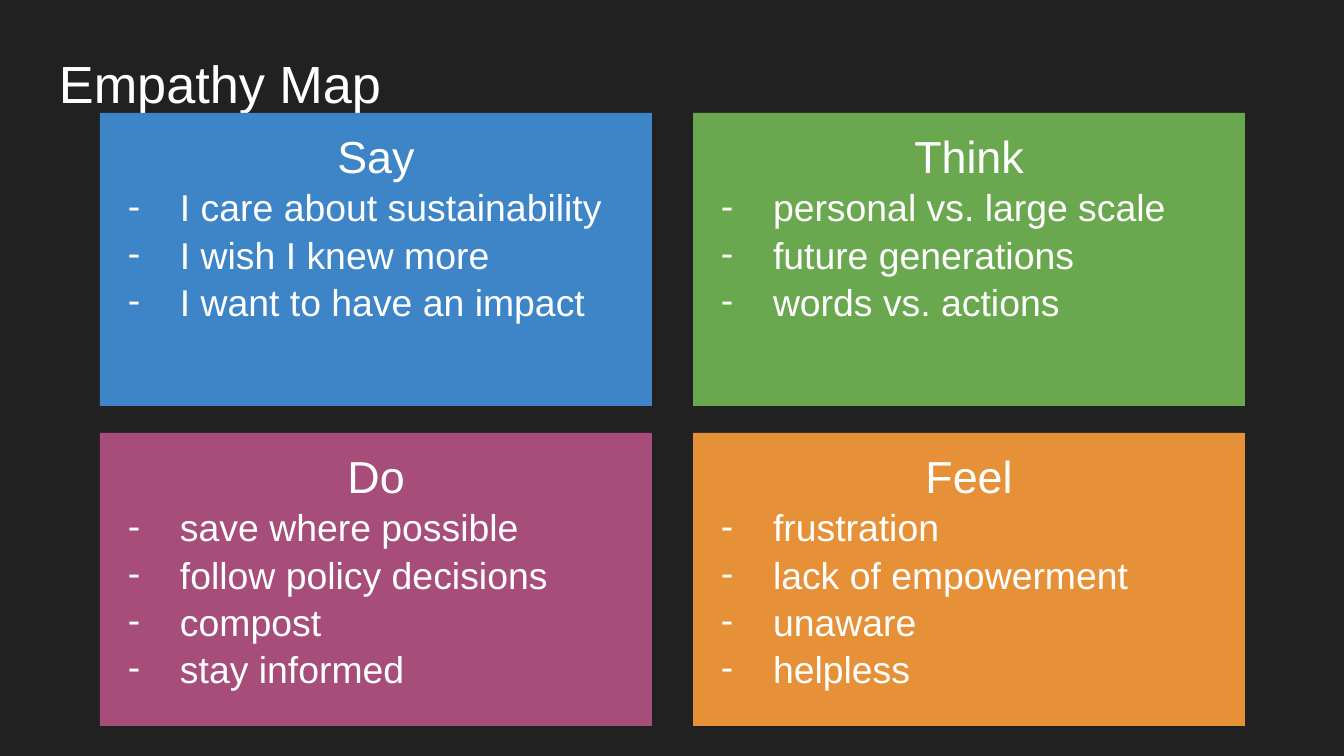
from lxml.etree import SubElement
from pptx import Presentation
from pptx.dml.color import RGBColor
from pptx.enum.shapes import MSO_SHAPE as SHAPE
from pptx.enum.text import MSO_ANCHOR as ANCHOR, PP_ALIGN as ALIGN
from pptx.oxml.ns import qn
from pptx.util import Pt

PX = 6804
DARK = RGBColor(0x21, 0x21, 0x21)
WHITE = RGBColor(0xFF, 0xFF, 0xFF)
BLUE = RGBColor(0x3D, 0x85, 0xC6)
GREEN = RGBColor(0x6A, 0xA8, 0x4F)
PLUM = RGBColor(0xA6, 0x4D, 0x79)
ORANGE = RGBColor(0xE6, 0x91, 0x38)

QUADRANTS = [
    ("Say", BLUE, ["I care about sustainability", "I wish I knew more",
                   "I want to have an impact"]),
    ("Think", GREEN, ["personal vs. large scale", "future generations",
                      "words vs. actions"]),
    ("Do", PLUM, ["save where possible", "follow policy decisions",
                  "compost", "stay informed"]),
    ("Feel", ORANGE, ["frustration", "lack of empowerment",
                      "unaware", "helpless"]),
]
LEFT, TOP, WIDTH, HEIGHT = 100, 113, 552, 293
STEP_X, STEP_Y = 593, 320


class Deck:
    """Style and current slide of the empathy map."""

    font, line_spacing, inset = "Arial", 1.05, 13

    def __init__(self, prs):
        self.slide = prs.slides.add_slide(prs.slide_layouts[6])
        fill = self.slide.background.fill
        fill.solid()
        fill.fore_color.rgb = DARK

    def frame(self, sp):
        tf = sp.text_frame
        tf.word_wrap = True
        tf.vertical_anchor = ANCHOR.TOP
        tf.margin_left = tf.margin_right = self.inset * PX
        tf.margin_top = tf.margin_bottom = self.inset * PX
        return tf

    def style(self, p, size, align=ALIGN.LEFT):
        p.alignment = align
        p.line_spacing = self.line_spacing
        for r in p.runs:
            r.font.name = self.font
            r.font.size = Pt(size)
            r.font.color.rgb = WHITE

    def bullet(self, p):
        pPr = p._p.get_or_add_pPr()
        pPr.set("marL", str(67 * PX))
        pPr.set("indent", str(-52 * PX))
        color = SubElement(pPr, qn("a:buClr"))
        SubElement(color, qn("a:srgbClr"), val=str(WHITE))
        SubElement(pPr, qn("a:buFont"), typeface=self.font)
        SubElement(pPr, qn("a:buChar"), char="-")

    def title(self, text, x, y, w, h):
        sp = self.slide.shapes.add_textbox(x * PX, y * PX, w * PX, h * PX)
        tf = self.frame(sp)
        tf.margin_top = 16 * PX
        tf.text = text
        self.style(tf.paragraphs[0], 28)

    def quadrant(self, heading, color, items, x, y):
        sp = self.slide.shapes.add_shape(
            SHAPE.RECTANGLE, x * PX, y * PX, WIDTH * PX, HEIGHT * PX)
        sp.shadow.inherit = False
        sp.fill.solid()
        sp.fill.fore_color.rgb = color
        sp.line.fill.background()
        tf = self.frame(sp)
        tf.text = heading
        self.style(tf.paragraphs[0], 24, ALIGN.CENTER)
        for item in items:
            p = tf.add_paragraph()
            p.text = item
            self.bullet(p)
            self.style(p, 20)


def main():
    prs = Presentation()
    prs.slide_width, prs.slide_height = 1344 * PX, 756 * PX
    deck = Deck(prs)
    deck.title("Empathy Map", 46, 32, 1252, 85)
    for i, (heading, color, items) in enumerate(QUADRANTS):
        row, col = divmod(i, 2)
        deck.quadrant(heading, color, items,
                      LEFT + col * STEP_X, TOP + row * STEP_Y)
    prs.save("out.pptx")


if __name__ == "__main__":
    main()
